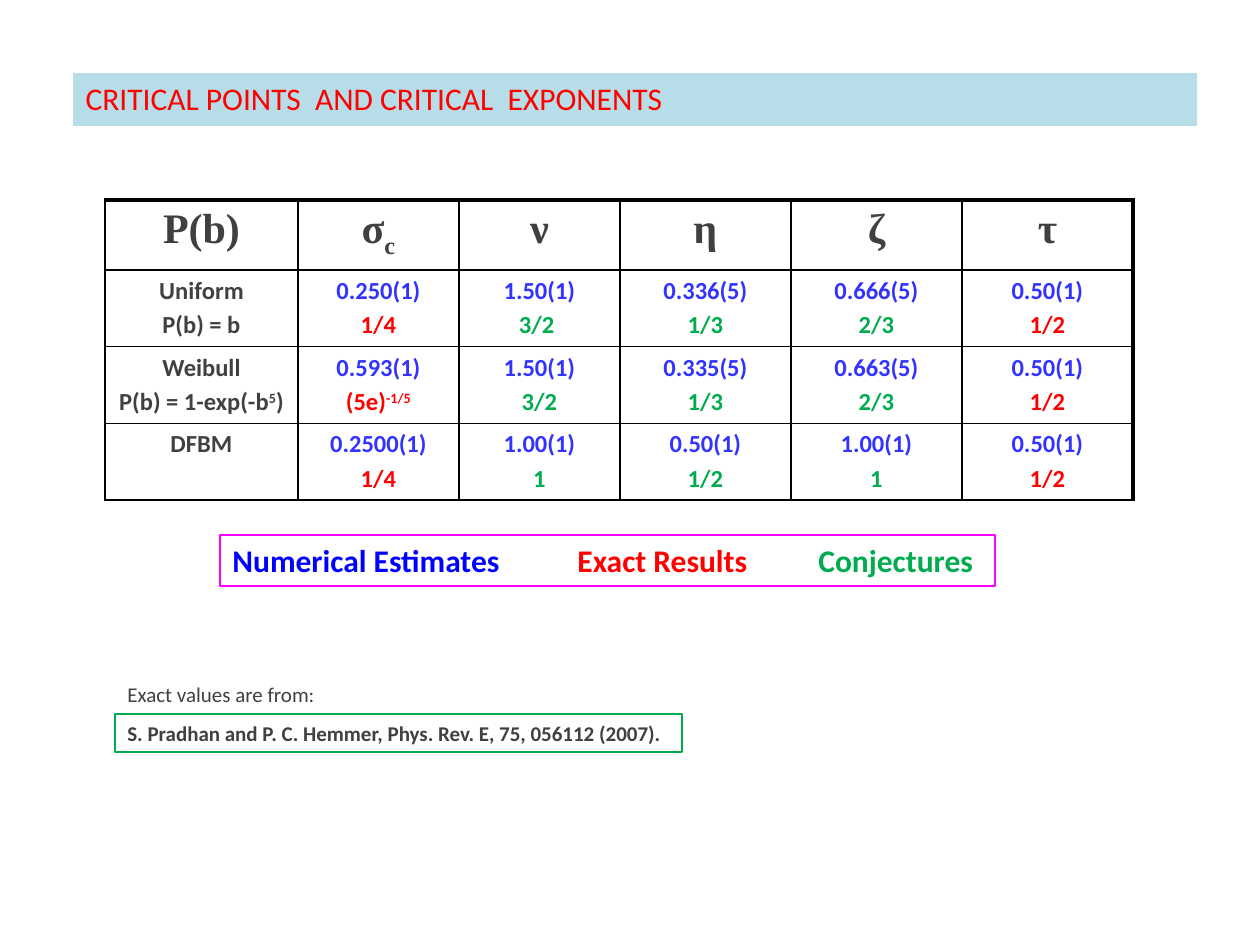
from lxml import etree
from pptx import Presentation
from pptx.dml.color import RGBColor
from pptx.enum.shapes import MSO_SHAPE
from pptx.enum.text import MSO_ANCHOR, MSO_AUTO_SIZE, PP_ALIGN
from pptx.oxml.ns import qn
from pptx.util import Emu, Pt

RECTANGLE = MSO_SHAPE.RECTANGLE
TOP = MSO_ANCHOR.TOP
LEFT, CENTER = PP_ALIGN.LEFT, PP_ALIGN.CENTER

PX_PER_INCH = 126
COLORS = {
    "text": "404040", "estimate": "3333FF", "exact": "FF0000", "conjecture": "00AC4E",
    "legend blue": "0000FF", "legend frame": "FF00FF", "title band": "B7DEE8", "border": "000000",
}

TITLE = "CRITICAL POINTS  AND CRITICAL  EXPONENTS"
# A bar starts or ends a raised or lowered part.
HEADINGS = ["P(b)", "σ|c", "ν", "η", "ζ", "τ"]
RESULT_KINDS = ["exact", "conjecture", "conjecture", "conjecture", "exact"]
DISTRIBUTIONS = [
    (["Uniform", "P(b) = b"],
     [("0.250(1)", "1/4"), ("1.50(1)", "3/2 "), ("0.336(5)", "1/3"),
      ("0.666(5)", "2/3"), ("0.50(1)", "1/2")]),
    (["Weibull", "P(b) = 1-exp(-b|5|)"],
     [("0.593(1)", "(5e)|-1/5"), ("1.50(1)", "3/2"), ("0.335(5)", "1/3"),
      ("0.663(5)", "2/3"), ("0.50(1)", "1/2")]),
    (["DFBM"],
     [("0.2500(1)", "1/4"), ("1.00(1)", "1"), ("0.50(1)", "1/2"),
      ("1.00(1)", "1"), ("0.50(1)", "1/2")]),
]
LEGEND = [("Numerical Estimates", "legend blue"), ("Exact Results", "exact"),
          ("Conjectures", "conjecture")]
LEGEND_TABS = [345, 586]
SOURCE_LABEL = "Exact values are from:"
SOURCE = "S. Pradhan and P. C. Hemmer, Phys. Rev. E, 75, 056112 (2007)."

TABLE_LEFT, TABLE_TOP = 105, 200
COLUMN_WIDTHS = [193, 161, 161, 171, 171, 171]
ROW_HEIGHTS = [70, 76, 76, 76]
THIN, THICK = 1, 2.25


def px(length):
    return Emu(round(length * 914400 / PX_PER_INCH))


def rgb(name):
    return RGBColor.from_string(COLORS[name])


def set_font(font, size, color, bold=False, name="Calibri"):
    font.size, font.bold, font.name = Pt(size), bold, name
    font.color.rgb = rgb(color)


def add_shifted_runs(para, text, shift):
    for index, part in enumerate(text.split("|")):
        span = para.add_run()
        span.text = part
        if index % 2:
            span.font._element.set("baseline", str(shift * 1000))


def set_borders(cell, widths):
    properties = cell._tc.get_or_add_tcPr()
    for side, width in widths.items():
        line = etree.SubElement(properties, qn("a:ln" + side), w=str(Pt(width)))
        fill = etree.SubElement(line, qn("a:solidFill"))
        etree.SubElement(fill, qn("a:srgbClr"), val=COLORS["border"])


def fill_cell(cell, lines, size=14, name="Calibri", shift=30):
    frame = cell.text_frame
    for index, (text, color) in enumerate(lines):
        para = frame.add_paragraph() if index else frame.paragraphs[0]
        para.alignment = CENTER
        para.space_before = Pt(2.5)
        set_font(para.font, size, color, True, name)
        add_shifted_runs(para, text, shift)


def add_results_table(page):
    table = page.shapes.add_table(
        len(ROW_HEIGHTS), len(COLUMN_WIDTHS), px(TABLE_LEFT), px(TABLE_TOP),
        px(sum(COLUMN_WIDTHS)), px(sum(ROW_HEIGHTS))).table
    table.first_row = table.horz_banding = False
    for column, width in zip(table.columns, COLUMN_WIDTHS):
        column.width = px(width)
    for row, height in zip(table.rows, ROW_HEIGHTS):
        row.height = px(height)

    last = len(COLUMN_WIDTHS) - 1
    for r, row in enumerate(table.rows):
        for c, cell in enumerate(row.cells):
            set_borders(cell, {"L": THIN, "R": THICK if c == last else THIN,
                               "T": THIN if r else THICK, "B": THIN})
            cell.fill.background()

    for c, heading in enumerate(HEADINGS):
        fill_cell(table.cell(0, c), [(heading, "text")], 24, "Times New Roman", -25)
    for r, (labels, results) in enumerate(DISTRIBUTIONS, 1):
        fill_cell(table.cell(r, 0), [(label, "text") for label in labels])
        for c, ((estimate, result), kind) in enumerate(zip(results, RESULT_KINDS), 1):
            fill_cell(table.cell(r, c), [(estimate, "estimate"), (result, kind)])


def add_frame(page, left, top, width, height, line_color):
    """Add an unfilled outlined rectangle and return its first paragraph."""
    box = page.shapes.add_shape(RECTANGLE, px(left), px(top), px(width), px(height))
    box.shadow.inherit = False
    box.fill.background()
    box.line.color.rgb = rgb(line_color)
    box.line.width = Pt(0.75)
    box.text_frame.word_wrap = True
    box.text_frame.vertical_anchor = TOP
    para = box.text_frame.paragraphs[0]
    para.alignment = LEFT
    return para


def add_legend(page):
    para = add_frame(page, 220, 535, 775, 51, "legend frame")
    tabs = etree.SubElement(para._p.get_or_add_pPr(), qn("a:tabLst"))
    for position in LEGEND_TABS:
        etree.SubElement(tabs, qn("a:tab"), pos=str(px(position)), algn="l")
    for index, (text, color) in enumerate(LEGEND):
        span = para.add_run()
        span.text = "\t" + text if index else text
        set_font(span.font, 18, color, True)


def add_source(page):
    label = page.shapes.add_textbox(px(115), px(675), px(216), px(38))
    label.text_frame.word_wrap = False
    para = label.text_frame.paragraphs[0]
    para.text = SOURCE_LABEL
    set_font(para.font, 12, "text")

    para = add_frame(page, 115, 714, 567, 38, "conjecture")
    para.text = SOURCE
    set_font(para.font, 12, "text", True)


def set_title(page):
    title = page.shapes.title
    title.left, title.top, title.width, title.height = map(px, (73, 73, 1124, 53))
    title.fill.solid()
    title.fill.fore_color.rgb = rgb("title band")
    frame = title.text_frame
    frame.auto_size = MSO_AUTO_SIZE.NONE
    frame.vertical_anchor = TOP
    para = frame.paragraphs[0]
    para.text = TITLE
    para.alignment = LEFT
    set_font(para.font, 18, "exact")


def main():
    deck = Presentation()
    deck.slide_width, deck.slide_height = px(1260), px(945)
    page = deck.slides.add_slide(deck.slide_layouts[5])
    set_title(page)
    add_results_table(page)
    add_legend(page)
    add_source(page)
    deck.save("out.pptx")


if __name__ == "__main__":
    main()
